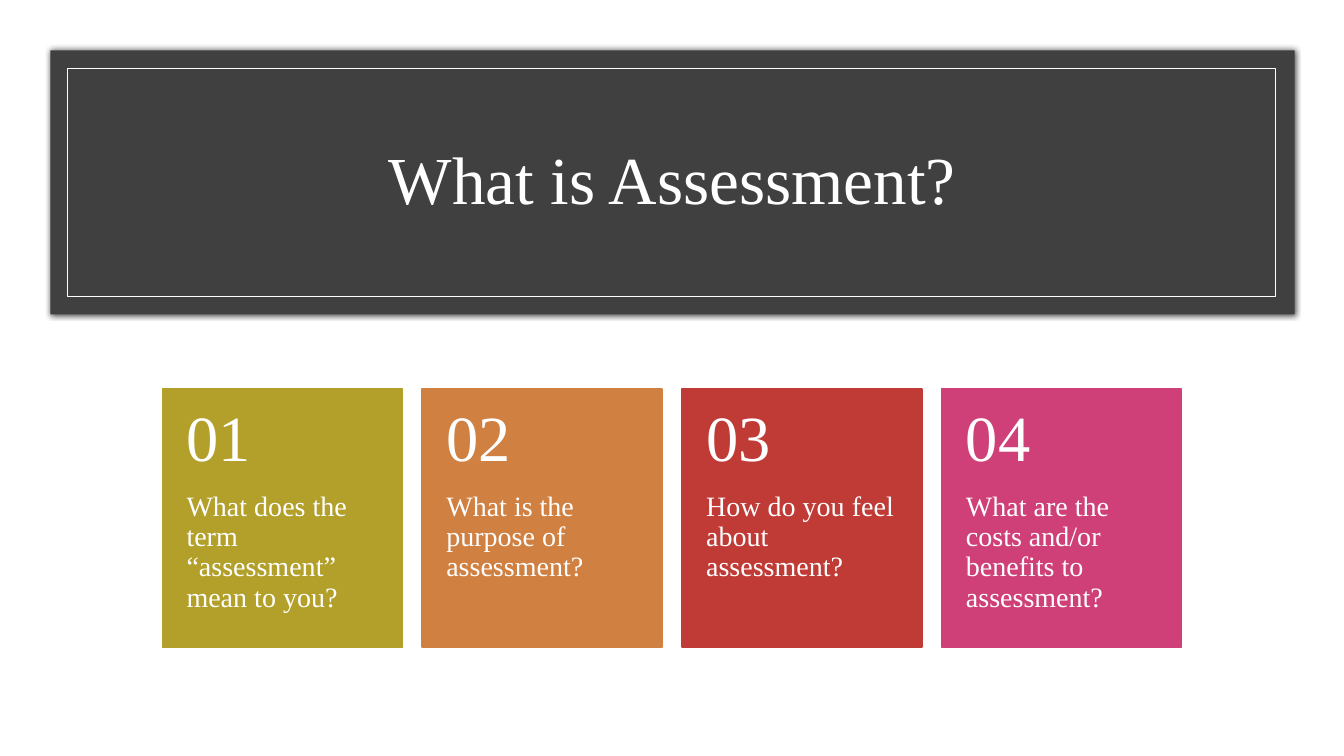
from lxml import etree
from pptx import Presentation, util as u
from pptx.dml.color import RGBColor
from pptx.enum import shapes, text

TITLE = "What is Assessment?"
CARDS = [
    ("01", "What does the term “assessment” mean to you?", "B2A02B"),
    ("02", "What is the purpose of assessment?", "D08040"),
    ("03", "How do you feel about assessment?", "C03A36"),
    ("04", "What are the costs and/or benefits to assessment?", "D04078"),
]
THEME = {
    "font": "Times New Roman", "paper": "FFFFFF", "banner": "404040",
    "ink": "FFFFFF", "title": 48, "number": 46, "question": 20,
}
WIDTH, HEIGHT = 13.33, 7.5
BANNER = (0.5, 0.5, 12.34, 2.62)
FRAME = (0.67, 0.68, 11.98, 2.26)
TITLE_AREA = (1.17, 1.06, 11, 1.5)
CARD_LEFT, CARD_TOP, CARD_WIDTH, CARD_HEIGHT = 1.61, 3.86, 2.38, 2.56
CARD_PITCH = (WIDTH - 2 * CARD_LEFT - CARD_WIDTH) / (len(CARDS) - 1)
NUMBER_HEIGHT = 0.4 * CARD_HEIGHT
SHADOW = (
    '<a:effectLst xmlns:a="http://schemas.openxmlformats.org/drawingml/2006/main">'
    '<a:outerShdw blurRad="50800" dist="0" dir="0" algn="ctr" rotWithShape="0">'
    '<a:srgbClr val="000000"><a:alpha val="66000"/></a:srgbClr>'
    '</a:outerShdw></a:effectLst>'
)


def color(value):
    return RGBColor.from_string(value)


def inches(values):
    return [u.Inches(value) for value in values]


def add_panel(page, area, fill=None, line=None, weight=1):
    panel = page.shapes.add_shape(shapes.MSO_SHAPE.RECTANGLE, *inches(area))
    panel.shadow.inherit = False
    if fill:
        panel.fill.solid()
        panel.fill.fore_color.rgb = color(fill)
    else:
        panel.fill.background()
    if line:
        panel.line.color.rgb = color(line)
        panel.line.width = u.Pt(weight)
    else:
        panel.line.fill.background()
    return panel


def write(box, words, size, align, anchor, margins):
    frame = box.text_frame
    sides = ("margin_left", "margin_top", "margin_right", "margin_bottom")
    settings = {"word_wrap": True, "auto_size": text.MSO_AUTO_SIZE.NONE,
                "vertical_anchor": anchor, **dict(zip(sides, inches(margins)))}
    for name, value in settings.items():
        setattr(frame, name, value)
    para = frame.paragraphs[0]
    para.alignment, para.line_spacing = align, 0.9
    span = para.add_run()
    span.text = words
    for name, value in {"name": THEME["font"], "size": u.Pt(size)}.items():
        setattr(span.font, name, value)
    span.font.color.rgb = color(THEME["ink"])


def add_banner(page):
    banner = add_panel(page, BANNER, fill=THEME["banner"])
    properties = banner._element.spPr
    properties.remove(properties.find("{*}effectLst"))
    properties.append(etree.fromstring(SHADOW))
    add_panel(page, FRAME, line=THEME["ink"], weight=0.5)

    title = page.shapes.title
    title.left, title.top, title.width, title.height = inches(TITLE_AREA)
    write(title, TITLE, THEME["title"], text.PP_ALIGN.CENTER,
          text.MSO_ANCHOR.MIDDLE, (0.1, 0.05, 0.1, 0.05))
    page.shapes._spTree.append(title._element)  # bring in front of the banner


def add_card(page, column, number, question, fill):
    left = CARD_LEFT + column * CARD_PITCH
    add_panel(page, (left, CARD_TOP, CARD_WIDTH, CARD_HEIGHT), fill, fill)
    parts = [
        (question, "question", CARD_TOP + NUMBER_HEIGHT, CARD_HEIGHT - NUMBER_HEIGHT,
         text.MSO_ANCHOR.TOP, (0.24, 0, 0.24, 0.36)),
        (number, "number", CARD_TOP, NUMBER_HEIGHT,
         text.MSO_ANCHOR.MIDDLE, (0.24, 0.18, 0.24, 0.18)),
    ]
    for words, role, top, height, anchor, margins in parts:
        box = page.shapes.add_textbox(*inches((left, top, CARD_WIDTH, height)))
        write(box, words, THEME[role], text.PP_ALIGN.LEFT, anchor, margins)


def main():
    deck = Presentation()
    deck.slide_width, deck.slide_height = inches((WIDTH, HEIGHT))
    page = deck.slides.add_slide(deck.slide_layouts.get_by_name("Title Only"))
    page.background.fill.solid()
    page.background.fill.fore_color.rgb = color(THEME["paper"])
    add_banner(page)
    for column, card in enumerate(CARDS):
        add_card(page, column, *card)
    deck.save("out.pptx")


if __name__ == "__main__":
    main()
